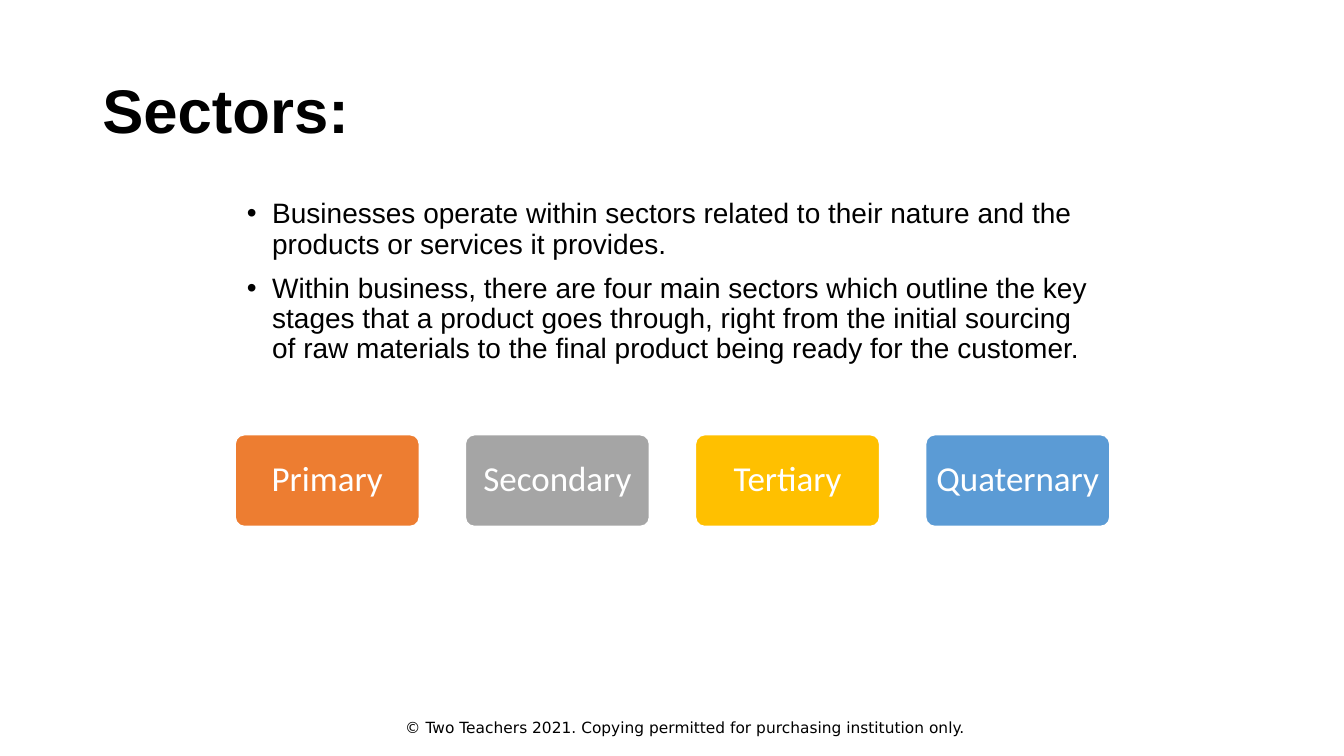
from typing import NamedTuple

from lxml import etree
from pptx import Presentation
from pptx.dml.color import RGBColor
from pptx.enum.shapes import MSO_SHAPE as Shape
from pptx.enum.text import MSO_ANCHOR as Anchor, MSO_AUTO_SIZE as AutoSize, PP_ALIGN as Align
from pptx.oxml.ns import qn
from pptx.util import Pt


class Sector(NamedTuple):
    name: str
    color: str


SECTORS = [
    Sector("Primary", "ED7D31"),
    Sector("Secondary", "A5A5A5"),
    Sector("Tertiary", "FFC000"),
    Sector("Quaternary", "5B9BD5"),
]
POINTS = [
    "Businesses operate within sectors related to their nature and the products "
    "or services it provides.",
    "Within business, there are four main sectors which outline the key stages that "
    "a product goes through, right from the initial sourcing of raw materials to the "
    "final product being ready for the customer.",
]
BOX_LEFT, BOX_TOP, BOX_WIDTH, BOX_HEIGHT, BOX_PITCH = 168, 310.5, 131.5, 65.5, 164.4


def rgb(value: str) -> RGBColor:
    return RGBColor.from_string(value)


def place(sp, left: float, top: float, width: float, height: float) -> None:
    sp.left, sp.top, sp.width, sp.height = Pt(left), Pt(top), Pt(width), Pt(height)


def format_text(p, font: str, size: float, color: str = "000000", bold: bool = False,
                align: Align = Align.LEFT, spacing: float = 0.9) -> None:
    p.alignment = align
    p.line_spacing = spacing
    for r in p.runs:
        r.font.name, r.font.size, r.font.bold = font, Pt(size), bold
        r.font.color.rgb = rgb(color)


def add_bullet(p, indent: float) -> None:
    pPr = p._p.get_or_add_pPr()
    pPr.set("marL", str(Pt(indent)))
    pPr.set("indent", str(-Pt(indent)))
    etree.SubElement(pPr, qn("a:buFont")).set("typeface", "Arial")
    etree.SubElement(pPr, qn("a:buChar")).set("char", "•")


def add_sector(s, sector: Sector, left: float) -> None:
    sp = s.shapes.add_shape(Shape.ROUNDED_RECTANGLE, Pt(left), Pt(BOX_TOP),
                            Pt(BOX_WIDTH), Pt(BOX_HEIGHT))
    sp.adjustments[0] = 0.1
    sp.shadow.inherit = False
    sp.fill.solid()
    sp.fill.fore_color.rgb = rgb(sector.color)
    sp.line.color.rgb = rgb("FFFFFF")
    sp.line.width = Pt(1)
    tf = sp.text_frame
    tf.text = sector.name
    tf.word_wrap = True
    tf.vertical_anchor = Anchor.MIDDLE
    tf.margin_left = tf.margin_right = Pt(5)
    tf.margin_top = tf.margin_bottom = Pt(3)
    format_text(tf.paragraphs[0], "Calibri", 25, "FFFFFF", align=Align.CENTER)


def main() -> None:
    prs = Presentation()
    prs.slide_width, prs.slide_height = Pt(960), Pt(540)
    s = prs.slides.add_slide(prs.slide_layouts[1])

    # Title
    title = s.shapes.title
    place(title, 66, 28.8, 828, 104.4)
    tf = title.text_frame
    tf.text = "Sectors:"
    tf.auto_size = AutoSize.NONE
    tf.vertical_anchor = Anchor.MIDDLE
    format_text(tf.paragraphs[0], "Arial", 44, bold=True)

    # Bulleted body
    body = s.placeholders[1]
    place(body, 169.2, 139, 620.6, 342.7)
    tf = body.text_frame
    tf.text = "\n".join(POINTS)
    tf.auto_size = AutoSize.NONE
    for i, p in enumerate(tf.paragraphs):
        add_bullet(p, 18)
        p.space_before = Pt(10 if i else 0)
        format_text(p, "Arial", 20)

    # Row of sectors
    for i, sector in enumerate(SECTORS):
        add_sector(s, sector, BOX_LEFT + i * BOX_PITCH)

    # Copyright line
    footer = s.shapes.add_textbox(Pt(168), Pt(508.3), Pt(643), Pt(22.3))
    tf = footer.text_frame
    tf.text = "© Two Teachers 2021. Copying permitted for purchasing institution only."
    tf.word_wrap = True
    tf.vertical_anchor = Anchor.MIDDLE
    format_text(tf.paragraphs[0], "DejaVu Sans", 11, align=Align.CENTER, spacing=1.0)

    prs.save("out.pptx")


if __name__ == "__main__":
    main()
